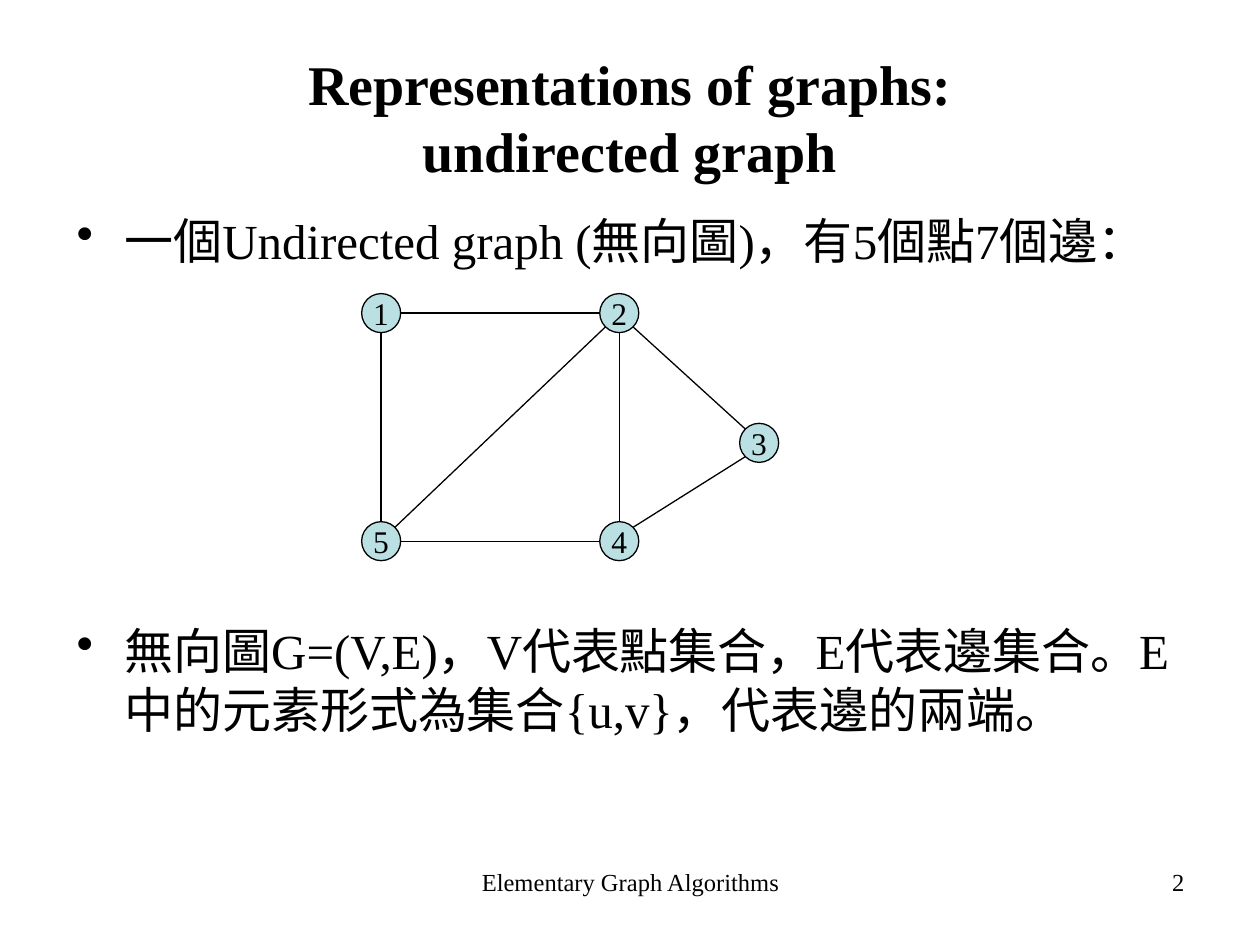
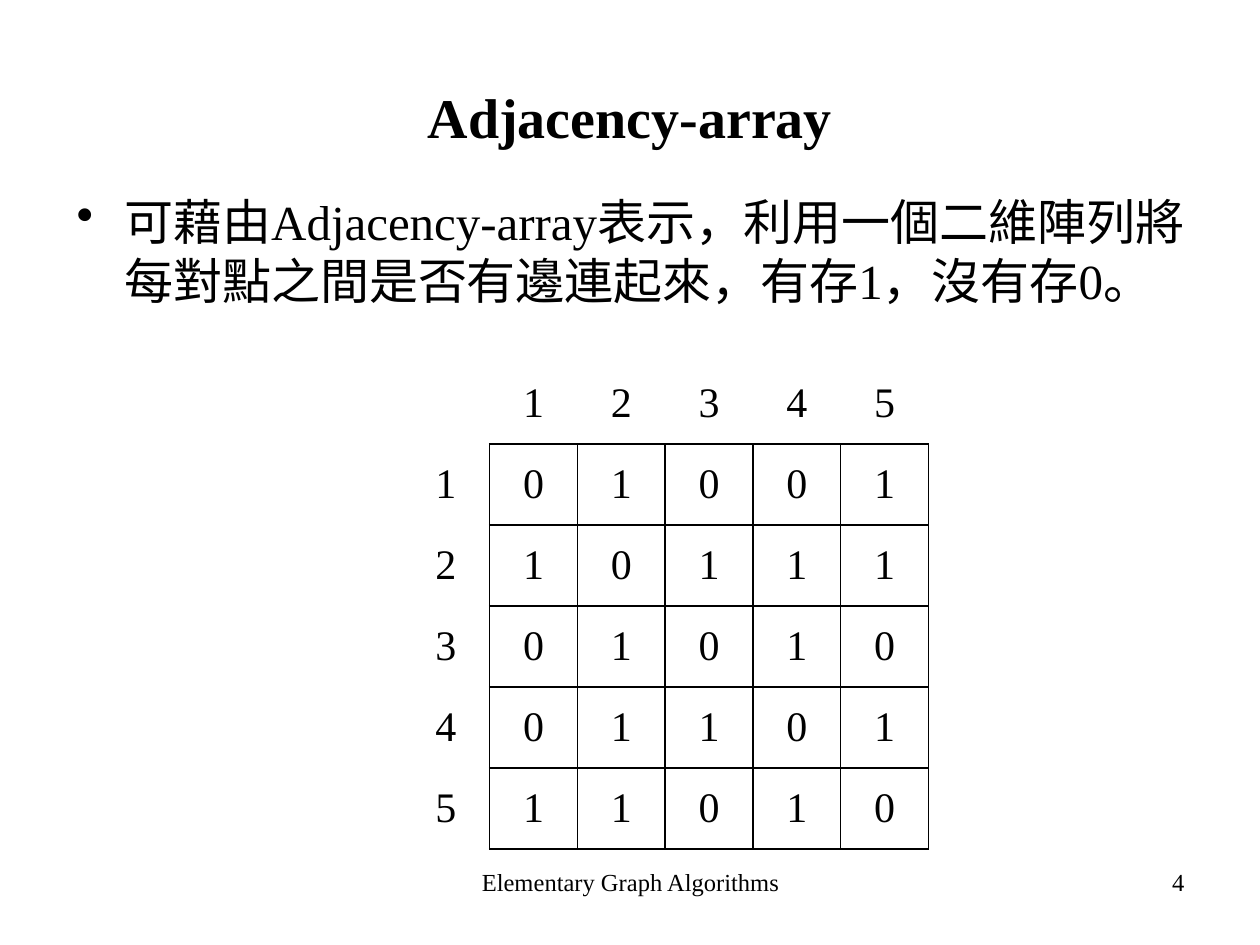
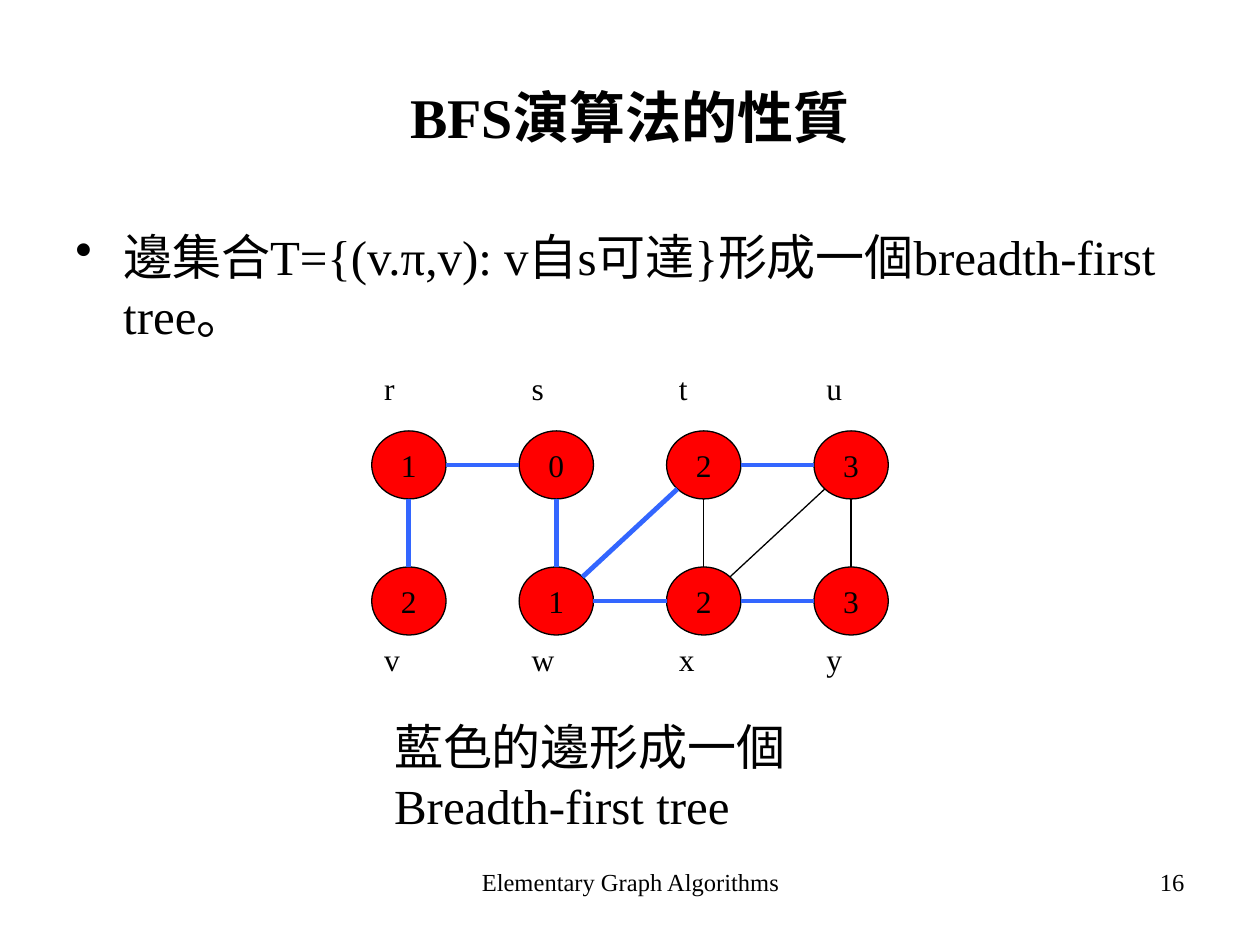
from dataclasses import dataclass

from lxml import etree
from pptx import Presentation
from pptx.dml.color import RGBColor
from pptx.enum.shapes import MSO_CONNECTOR, MSO_SHAPE
from pptx.enum.text import MSO_ANCHOR, MSO_AUTO_SIZE, PP_ALIGN
from pptx.oxml.ns import qn
from pptx.util import Inches, Pt

LEFT, CENTER, RIGHT = PP_ALIGN.LEFT, PP_ALIGN.CENTER, PP_ALIGN.RIGHT
TOP, MIDDLE = MSO_ANCHOR.TOP, MSO_ANCHOR.MIDDLE
NO_AUTOSIZE = MSO_AUTO_SIZE.NONE
STRAIGHT, OVAL = MSO_CONNECTOR.STRAIGHT, MSO_SHAPE.OVAL
TITLE_ONLY = 5


@dataclass(frozen=True)
class Theme:
    font: str = "Times New Roman"
    cjk_font: str = "Noto Sans CJK SC"
    ink: str = "000000"
    node: str = "BBE0E3"
    visited: str = "FF0000"
    tree_edge: str = "3366FF"
    title: int = 32
    body: int = 28
    cell: int = 24
    label: int = 18
    footer: int = 14
    thin: float = 0.75
    thick: float = 2.75


T = Theme()
FOOTER = "Elementary Graph Algorithms"
TITLE_BOX = (0.5, 0.3, 9, 1.25)
FOOTER_BOX = (3.42, 6.83, 3.17, 0.52)
NUMBER_BOX = (7.17, 6.83, 2.33, 0.52)


def rgb(color):
    return RGBColor.from_string(color)


def inches(box):
    return [Inches(v) for v in box]


# Text helpers
def write(tf, text, size, align=LEFT, anchor=TOP, bold=False, wrap=True):
    frame_format = {"word_wrap": wrap, "auto_size": NO_AUTOSIZE,
                    "vertical_anchor": anchor}
    for name, value in frame_format.items():
        setattr(tf, name, value)
    tf.text = text
    for p in tf.paragraphs:
        p.alignment = align
        for r in p.runs:
            font_format = {"name": T.font, "size": Pt(size), "bold": bold}
            for name, value in font_format.items():
                setattr(r.font, name, value)
            r.font.color.rgb = rgb(T.ink)
            ea = etree.SubElement(r.font._element, qn("a:ea"))
            ea.set("typeface", T.cjk_font)


def add_text(shapes, box, text, size, align=LEFT):
    sp = shapes.add_textbox(*inches(box))
    write(sp.text_frame, text, size, align)
    return sp.text_frame


def add_bullets(s, box, items, gap=5.6):
    tf = add_text(s.shapes, box, "\n".join(items), T.body)
    for i, p in enumerate(tf.paragraphs):
        p.space_before = Pt(gap if i else 0)
        pPr = p._p.get_or_add_pPr()
        pPr.set("marL", str(Inches(0.38)))
        pPr.set("indent", str(-Inches(0.38)))
        etree.SubElement(pPr, qn("a:buChar")).set("char", "•")


# Title, footer and number shared by all slides
def new_slide(prs, title, number):
    s = prs.slides.add_slide(prs.slide_layouts[TITLE_ONLY])
    sp = s.shapes.title
    sp.left, sp.top, sp.width, sp.height = inches(TITLE_BOX)
    write(sp.text_frame, title, T.title, CENTER, MIDDLE, bold=True)
    add_text(s.shapes, FOOTER_BOX, FOOTER, T.footer, CENTER)
    add_text(s.shapes, NUMBER_BOX, str(number), T.footer, RIGHT)
    return s


# Graph parts
def add_node(shapes, box, text, fill):
    sp = shapes.add_shape(OVAL, *inches(box))
    sp.shadow.inherit = False
    sp.fill.solid()
    sp.fill.fore_color.rgb = rgb(fill)
    sp.line.color.rgb = rgb(T.ink)
    sp.line.width = Pt(T.thin)
    write(sp.text_frame, text, T.label, CENTER, MIDDLE, wrap=False)
    return sp


def rim_point(sp, dx, dy):
    """Point on an ellipse's rim in one of the eight compass directions."""
    reach = 0.5 ** 0.5 if dx and dy else 1
    return (round(sp.left + sp.width / 2 * (1 + dx * reach)),
            round(sp.top + sp.height / 2 * (1 + dy * reach)))


def add_edge(shapes, a, b, color=T.ink, width=T.thin):
    dx = (b.left > a.left) - (b.left < a.left)
    dy = (b.top > a.top) - (b.top < a.top)
    cxn = shapes.add_connector(STRAIGHT, *rim_point(a, dx, dy),
                               *rim_point(b, -dx, -dy))
    cxn.line.color.rgb = rgb(color)
    cxn.line.width = Pt(width)
    etree.SubElement(cxn._element.spPr, qn("a:effectLst"))


def draw_undirected_graph(s, box):
    x, y, w, h = box
    d = 0.31
    mid, right, bottom = x + 1.89, x + w - d, y + h - d
    corners = {"1": (x, y), "5": (x, bottom), "2": (mid, y),
               "4": (mid, bottom), "3": (right, y + 1.03)}
    nodes = {name: add_node(s.shapes, (*corner, d, d), name, T.node)
             for name, corner in corners.items()}
    for a, b in ("15", "12", "24", "54", "25", "23", "43"):
        add_edge(s.shapes, nodes[a], nodes[b])


def draw_bfs_tree(s, box):
    x, y, w, h = box
    node_w, node_h, label_h = 0.59, 0.54, 0.4
    pitch = (w - node_w) / 3
    rows = [("rstu", "1023", y + 0.54, y),
            ("vwxy", "2123", y + 1.62, y + h - label_h)]
    shapes = s.shapes.add_group_shape().shapes
    nodes = {}
    for names, distances, node_y, label_y in rows:
        for i, (name, distance) in enumerate(zip(names, distances)):
            left = x + i * pitch
            nodes[name] = add_node(shapes, (left, node_y, node_w, node_h),
                                   distance, T.visited)
            add_text(shapes, (left, label_y, node_w, label_h), name, T.label)
    for a, b in ("rv", "rs", "sw", "wt", "xw", "xy", "tu"):
        add_edge(shapes, nodes[a], nodes[b], T.tree_edge, T.thick)
    for a, b in ("tx", "uy", "ux"):
        add_edge(shapes, nodes[a], nodes[b])


# Adjacency matrix
def set_borders(cell, sides):
    tcPr = cell._tc.get_or_add_tcPr()
    for i, side in enumerate("LRTB"):
        ln = etree.Element(qn(f"a:ln{side}"), w=str(Pt(1)))
        if side in sides:
            fill = etree.SubElement(ln, qn("a:solidFill"))
            etree.SubElement(fill, qn("a:srgbClr")).set("val", T.ink)
        else:
            etree.SubElement(ln, qn("a:noFill"))
        tcPr.insert(i, ln)


def add_matrix(s, box, matrix):
    n = len(matrix) + 1
    names = "".join(str(i) for i in range(1, n))
    grid = [["", *names]] + [[a, *row] for a, row in zip(names, matrix)]
    frame = s.shapes.add_table(n, n, *inches(box))
    table = frame.table
    table.first_row = table.horz_banding = False
    for line in (*table.columns,):
        line.width = Inches(box[2] / n)
    for i, row in enumerate(grid):
        for j, text in enumerate(row):
            cell = table.cell(i, j)
            cell.fill.background()
            cell.vertical_anchor = MIDDLE
            write_cell(cell, text)
            if i and j:
                set_borders(cell, "LRTB")
            else:
                set_borders(cell, "B" if j else "R" if i else "")


def write_cell(cell, text):
    write(cell.text_frame, text, T.cell, CENTER, MIDDLE)


# Slides
def undirected_slide(prs):
    s = new_slide(prs, "Representations of graphs:\vundirected graph", 2)
    add_bullets(s, (0.51, 1.62, 9, 5.67), [
        "一個Undirected graph (無向圖)，有5個點7個邊：",
        "無向圖G=(V,E)，V代表點集合，E代表邊集合。"
        "E中的元素形式為集合{u,v}，代表邊的兩端。"], gap=201)
    draw_undirected_graph(s, (2.87, 2.33, 3.31, 2.12))


def matrix_slide(prs):
    s = new_slide(prs, "Adjacency-array", 4)
    add_bullets(s, (0.51, 1.47, 9, 4.95), [
        "可藉由Adjacency-array表示，利用一個二維陣列"
        "將每對點之間是否有邊連起來，有存1，沒有存0。"])
    add_matrix(s, (3.19, 2.88, 4.18, 3.86),
               ["01001", "10111", "01010", "01101", "11010"])


def bfs_slide(prs):
    s = new_slide(prs, "BFS演算法的性質", 16)
    add_bullets(s, (0.5, 1.75, 9, 4.95), [
        "邊集合T={(v.π,v): v自s可達}形成一個breadth-first tree。"])
    draw_bfs_tree(s, (2.95, 2.88, 4.1, 2.55))
    add_text(s.shapes, (3.03, 5.64, 3.86, 1.03),
             "藍色的邊形成一個Breadth-first tree", T.body)


def main():
    prs = Presentation()
    prs.slide_width, prs.slide_height = Inches(10), Inches(7.5)
    for build in (undirected_slide, matrix_slide, bfs_slide):
        build(prs)
    prs.save("out.pptx")


if __name__ == "__main__":
    main()
